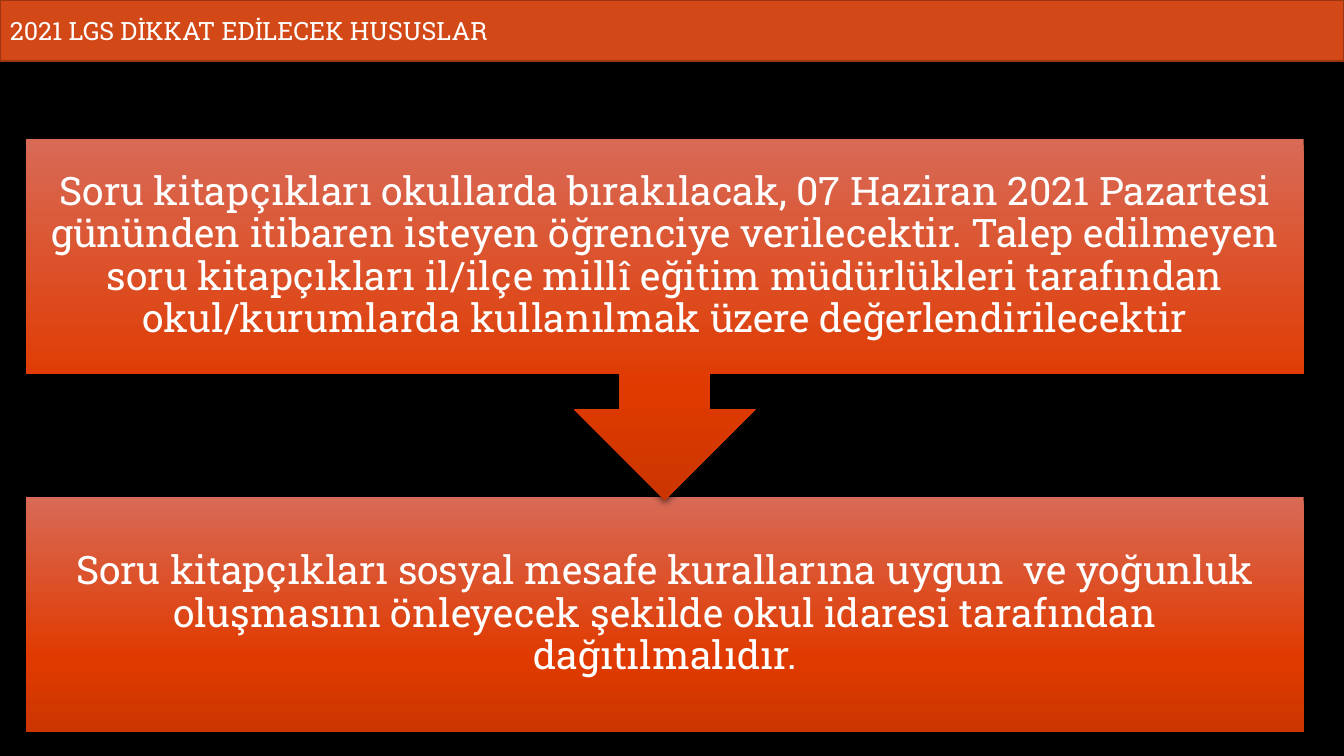
import pptx
import pptx.util
from pptx.dml.color import RGBColor
from pptx.enum.shapes import MSO_SHAPE
from pptx.enum.text import MSO_ANCHOR, PP_ALIGN
from pptx.oxml import parse_xml
from pptx.oxml.ns import nsdecls, qn
from pptx.util import Inches, Pt

HEADING = "2021 LGS DİKKAT EDİLECEK HUSUSLAR"
STEPS = [
    "Soru kitapçıkları okullarda bırakılacak, 07 Haziran 2021 Pazartesi gününden "
    "itibaren isteyen öğrenciye verilecektir. Talep edilmeyen soru kitapçıkları "
    "il/ilçe millî eğitim müdürlükleri tarafından okul/kurumlarda kullanılmak "
    "üzere değerlendirilecektir",
    "Soru kitapçıkları sosyal mesafe kurallarına uygun  ve yoğunluk oluşmasını "
    "önleyecek şekilde okul idaresi tarafından dağıtılmalıdır.",
]

FONT = "Roboto Slab"
BLACK = RGBColor(0x00, 0x00, 0x00)
WHITE = RGBColor(0xFF, 0xFF, 0xFF)
ORANGE = RGBColor(0xD3, 0x48, 0x17)
DARK_ORANGE = RGBColor(0x9C, 0x35, 0x11)
GRADIENT = [
    (0, RGBColor(0xD8, 0x6A, 0x56)),
    (69, RGBColor(0xE0, 0x3A, 0x00)),
    (100, RGBColor(0xCB, 0x35, 0x00)),
]

SLIDE_W, SLIDE_H = 13.33, 7.5
STEP_LEFT, STEP_W = 0.26, 12.67
STEP_TOP, STEP_PITCH = 1.38, 3.55
BOX_H, CALLOUT_H = 2.33, 3.58
INSET = Inches(0.22)


def write(shape, text, size, alignment):
    frame = shape.text_frame
    frame.word_wrap = True
    frame.vertical_anchor = MSO_ANCHOR.MIDDLE
    frame.text = text
    paragraph = frame.paragraphs[0]
    paragraph.alignment = alignment
    font = paragraph.runs[0].font
    font.name, font.size, font.color.rgb = FONT, Pt(size), WHITE
    return frame


def fill_gradient(shape):
    """Shade the shape from top to bottom through the GRADIENT stops."""
    shape.fill.gradient()
    shape.fill.gradient_angle = 270
    stops = shape._element.spPr.find(qn("a:gradFill")).find(qn("a:gsLst"))
    for stop in list(stops):
        stops.remove(stop)
    for percent, color in GRADIENT:
        stops.append(parse_xml(
            f'<a:gs {nsdecls("a")} pos="{percent * 1000}"><a:srgbClr val="{color}"/></a:gs>'))


def cast_shadow(shape):
    shape.shadow.inherit = False
    shape._element.spPr.find(qn("a:effectLst")).append(parse_xml(
        f'<a:outerShdw {nsdecls("a")} blurRad="{Pt(4)}" dist="{Pt(3)}" dir="5400000" '
        f'rotWithShape="0"><a:srgbClr val="{BLACK}"><a:alpha val="54000"/>'
        '</a:srgbClr></a:outerShdw>'))


def add_step(slide, index, text):
    """Add one step; every step but the last points down to the next."""
    is_last = index == len(STEPS) - 1
    kind = MSO_SHAPE.RECTANGLE if is_last else MSO_SHAPE.DOWN_ARROW_CALLOUT
    step = slide.shapes.add_shape(
        kind, Inches(STEP_LEFT), Inches(STEP_TOP + index * STEP_PITCH),
        Inches(STEP_W), Inches(BOX_H if is_last else CALLOUT_H))
    fill_gradient(step)
    step.line.fill.background()
    cast_shadow(step)
    frame = write(step, text, 28, PP_ALIGN.CENTER)
    frame.margin_left = frame.margin_right = INSET
    frame.margin_top = frame.margin_bottom = INSET
    frame.paragraphs[0].line_spacing = 0.9


def main():
    deck = pptx.Presentation()
    deck.slide_width, deck.slide_height = Inches(SLIDE_W), Inches(SLIDE_H)
    slide = deck.slides.add_slide(deck.slide_layouts[6])
    slide.background.fill.solid()
    slide.background.fill.fore_color.rgb = BLACK

    heading = slide.shapes.add_shape(
        MSO_SHAPE.RECTANGLE, 0, 0, Inches(SLIDE_W), Inches(0.61))
    heading.fill.solid()
    heading.fill.fore_color.rgb = ORANGE
    heading.line.color.rgb = DARK_ORANGE
    heading.line.width = Pt(1.5)
    heading.shadow.inherit = False
    write(heading, HEADING, 18, PP_ALIGN.LEFT)

    # The last step goes in first, so that each arrow tip lies over the next box.
    for index, text in reversed(list(enumerate(STEPS))):
        add_step(slide, index, text)

    deck.save("out.pptx")


if __name__ == "__main__":
    main()
